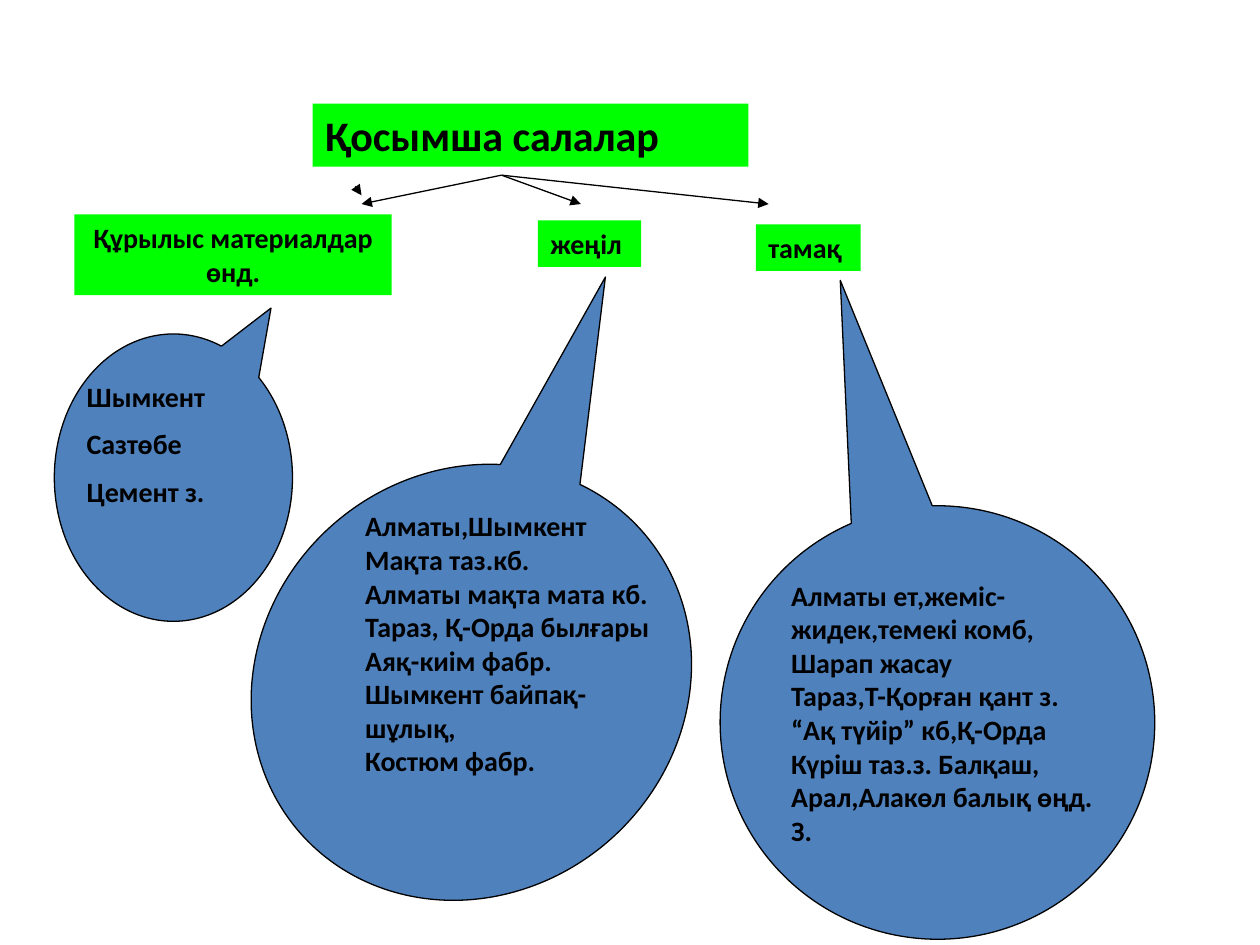
from lxml import etree
from pptx import Presentation
from pptx.dml.color import RGBColor
from pptx.enum.shapes import MSO_CONNECTOR, MSO_SHAPE
from pptx.enum.text import MSO_ANCHOR, PP_ALIGN
from pptx.oxml.ns import qn
from pptx.util import Pt

RECT = MSO_SHAPE.RECTANGLE
CALLOUT = MSO_SHAPE.OVAL_CALLOUT
STRAIGHT = MSO_CONNECTOR.STRAIGHT
LEFT, CENTER = PP_ALIGN.LEFT, PP_ALIGN.CENTER
TOP = MSO_ANCHOR.TOP

COLORS = {"label": "00FF00", "bubble": "4F81BD", "ink": "000000"}
FONT = "Calibri"

LABELS = [
    ("Қосымша салалар", (178.6, 59.3, 249.1, 36), 24, LEFT),
    ("Құрылыс материалдар өнд.", (42.5, 122.6, 181.4, 46.1), 16, CENTER),
    ("жеңіл", (307.4, 126, 59, 26.6), 16, LEFT),
    ("тамақ", (432, 128.2, 59.8, 26.6), 16, LEFT),
]

BUBBLES = [
    {
        "box": (31, 190.8, 136.1, 164.2), "rotation": 180, "tip": (-0.41, 0.59),
        "text_box": (42.5, 213.1, 112.3, 84.2), "gap": 8,
        "lines": ["Шымкент", "Сазтөбе", "Цемент з."],
    },
    {
        "box": (139, 270, 260.6, 239.8), "rotation": 138.4, "tip": (-0.81, 0.51),
        "text_box": (201.6, 287.3, 178, 199.4), "gap": 0,
        "lines": ["Алматы,Шымкент", "Мақта таз.кб.", "Алматы мақта мата кб.",
                  "Тараз, Қ-Орда былғары", "Аяқ-киім фабр.",
                  "Шымкент байпақ-шұлық,", "Костюм фабр."],
    },
    {
        "box": (411.8, 288.7, 247.7, 248.4), "rotation": 100.8, "tip": (-0.96, 0.41),
        "text_box": (445, 326.9, 198.7, 161.3), "gap": 0,
        "lines": ["Алматы ет,жеміс-", "жидек,темекі комб,", "Шарап жасау",
                  "Тараз,Т-Қорған қант з.", "“Ақ түйір” кб,Қ-Орда",
                  "Күріш таз.з. Балқаш,", "Арал,Алакөл балық өңд. З."],
    },
]

HUB = (286.6, 100.1)
ARROWS = [((203, 106.5), (206.6, 111.6))] + [
    (HUB, (x, 116.6)) for x in (206.6, 331.9, 439.2)
]


def rgb(name):
    return RGBColor.from_string(COLORS[name])


def points(values):
    return [Pt(v) for v in values]


def write(s, lines, size=16, align=LEFT, gap=0):
    tf = s.text_frame
    tf.word_wrap = True
    tf.vertical_anchor = TOP
    for i, line in enumerate(lines):
        p = tf.add_paragraph() if i else tf.paragraphs[0]
        p.alignment = align
        if i and gap:
            p.space_before = Pt(gap)
        r = p.add_run()
        r.text = line
        r.font.name = FONT
        r.font.size = Pt(size)
        r.font.bold = True
        r.font.color.rgb = rgb("ink")


def add_filled(shapes, kind, box, fill):
    s = shapes.add_shape(kind, *points(box))
    s.shadow.inherit = False
    s.fill.solid()
    s.fill.fore_color.rgb = rgb(fill)
    return s


def add_label(shapes, text, box, size, align):
    s = add_filled(shapes, RECT, box, "label")
    s.line.fill.background()
    write(s, [text], size=size, align=align)


def add_bubble(shapes, bubble):
    s = add_filled(shapes, CALLOUT, bubble["box"], "bubble")
    s.line.color.rgb = rgb("ink")
    s.line.width = Pt(0.75)
    s.rotation = bubble["rotation"]
    for i, value in enumerate(bubble["tip"]):
        s.adjustments[i] = value
    write(shapes.add_textbox(*points(bubble["text_box"])),
          bubble["lines"], gap=bubble["gap"])


def add_arrow(shapes, start, end):
    s = shapes.add_connector(STRAIGHT, *points(start + end))
    s.line.color.rgb = rgb("ink")
    s.line.width = Pt(0.75)
    etree.SubElement(s.line._get_or_add_ln(), qn("a:tailEnd"), type="triangle")
    etree.SubElement(s._element.spPr, qn("a:effectLst"))


def main():
    prs = Presentation()
    prs.slide_width, prs.slide_height = Pt(720), Pt(540)
    shapes = prs.slides.add_slide(prs.slide_layouts[6]).shapes
    for label in LABELS:
        add_label(shapes, *label)
    for bubble in BUBBLES:
        add_bubble(shapes, bubble)
    for start, end in ARROWS:
        add_arrow(shapes, start, end)
    prs.save("out.pptx")


if __name__ == "__main__":
    main()
